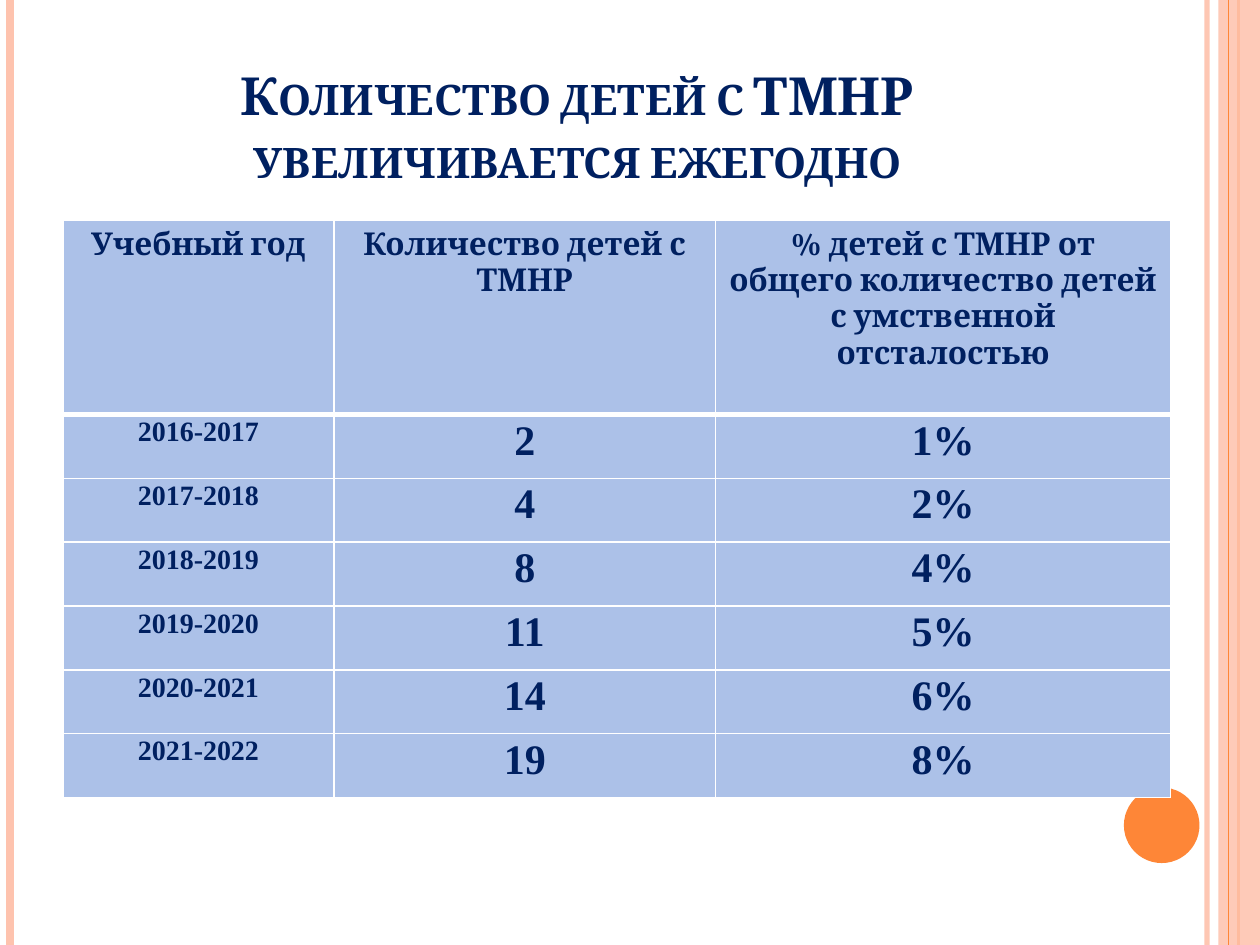
"""Build a slide with a table of the yearly number of children with ТМНР."""
from dataclasses import dataclass

from lxml import etree
from pptx import Presentation
from pptx import util as u
from pptx.dml.color import RGBColor
from pptx.enum import shapes, text
from pptx.oxml import ns


@dataclass(frozen=True)
class Theme:
    navy: str = "002060"
    peach: str = "FEC3AE"
    orange: str = "FE8637"
    cell: str = "ACC1E8"
    border: str = "FFFFFF"
    heading_font: str = "Cambria"
    body_font: str = "Times New Roman"
    title_size: int = 30
    header_size: int = 18
    year_size: int = 16
    value_size: int = 24


theme = Theme()


def write_text(frame, content, *, size, font, spacing=None, small_caps=False):
    paragraph = frame.paragraphs[0]
    paragraph.alignment = text.PP_ALIGN.CENTER
    if spacing:
        paragraph.line_spacing = spacing
    run = paragraph.add_run()
    run.text = content
    run.font.size = u.Pt(size)
    run.font.name = font
    run.font.bold = True
    run.font.color.rgb = RGBColor.from_string(theme.navy)
    if small_caps:
        run.font._element.set("cap", "small")


def set_alpha(shape_part, percent):
    color = next(shape_part.iter(ns.qn("a:srgbClr")))
    etree.SubElement(color, ns.qn("a:alpha")).set("val", str(percent * 1000))


presentation = Presentation()
presentation.slide_width = u.Inches(10)
presentation.slide_height = u.Inches(7.5)
slide = presentation.slides.add_slide(presentation.slide_layouts[6])
column = presentation.slide_width / 100
row = presentation.slide_height / 75


def_lines = [
    (95.8, theme.peach, 3, 93),
    (0.8, theme.peach, 4.5, 100),
    (98.3, theme.orange, 1.5, 100),
    (97.5, theme.orange, 0.75, 100),
]
for x, color, width, opacity in def_lines:
    if x == 97.5:
        band = slide.shapes.add_shape(
            shapes.MSO_SHAPE.RECTANGLE,
            int(96.7 * column), 0, int(3.3 * column), presentation.slide_height)
        band.shadow.inherit = False
        band.fill.solid()
        band.fill.fore_color.rgb = RGBColor.from_string(theme.peach)
        band.line.fill.background()
        set_alpha(band._element.spPr, 87)
    stripe = slide.shapes.add_connector(
        shapes.MSO_CONNECTOR.STRAIGHT,
        int(x * column), 0, int(x * column), presentation.slide_height)
    stripe.line.color.rgb = RGBColor.from_string(color)
    stripe.line.width = u.Pt(width)
    etree.SubElement(stripe._element.spPr, ns.qn("a:effectLst"))
    if opacity < 100:
        set_alpha(stripe._element.spPr, opacity)

circle = slide.shapes.add_shape(
    shapes.MSO_SHAPE.OVAL,
    int(89.2 * column), int(62.5 * row), int(6 * column), int(6 * row))
circle.shadow.inherit = False
circle.fill.solid()
circle.fill.fore_color.rgb = RGBColor.from_string(theme.orange)
circle.line.fill.background()

title = slide.shapes.add_textbox(
    int(5 * column), int(3 * row), int(81.7 * column), int(12.5 * row))
title.text_frame.word_wrap = True
title.text_frame.vertical_anchor = text.MSO_ANCHOR.BOTTOM
write_text(title.text_frame, "Количество детей с ТМНР увеличивается ежегодно",
           size=theme.title_size, font=theme.heading_font, small_caps=True)

records = [
    ("Учебный год", "Количество детей с ТМНР",
     "% детей с ТМНР от общего количество детей с умственной отсталостью"),
    ("2016-2017", "2", "1%"),
    ("2017-2018", "4", "2%"),
    ("2018-2019", "8", "4%"),
    ("2019-2020", "11", "5%"),
    ("2020-2021", "14", "6%"),
    ("2021-2022", "19", "8%"),
]
column_spans = [21.5, 30.3, 36.1]
row_spans = [15.4] + [5.07] * (len(records) - 1)
table = slide.shapes.add_table(
    len(records), len(column_spans), int(5 * column), int(17.5 * row),
    int(sum(column_spans) * column), int(sum(row_spans) * row)).table
for table_column, span in zip(table.columns, column_spans):
    table_column.width = int(span * column)

for row_index, (record, span) in enumerate(zip(records, row_spans)):
    table.rows[row_index].height = int(span * row)
    is_header = row_index == 0
    for column_index, content in enumerate(record):
        cell = table.cell(row_index, column_index)
        if is_header:
            write_text(cell.text_frame, content,
                       size=theme.header_size, font=theme.heading_font)
        else:
            cell.margin_left = cell.margin_right = u.Inches(0.07)
            cell.margin_top = cell.margin_bottom = 0
            size = theme.value_size if column_index else theme.year_size
            write_text(cell.text_frame, content, size=size,
                       font=theme.body_font, spacing=1.07)
        properties = cell._tc.get_or_add_tcPr()
        for side in ("L", "R", "T", "B"):
            thick = (is_header and side == "B") or (row_index == 1 and side == "T")
            edge = etree.SubElement(properties, ns.qn(f"a:ln{side}"))
            edge.set("w", str(u.Pt(3 if thick else 1)))
            fill = etree.SubElement(edge, ns.qn("a:solidFill"))
            etree.SubElement(fill, ns.qn("a:srgbClr")).set("val", theme.border)
        cell.fill.solid()
        cell.fill.fore_color.rgb = RGBColor.from_string(theme.cell)

presentation.save("out.pptx")
